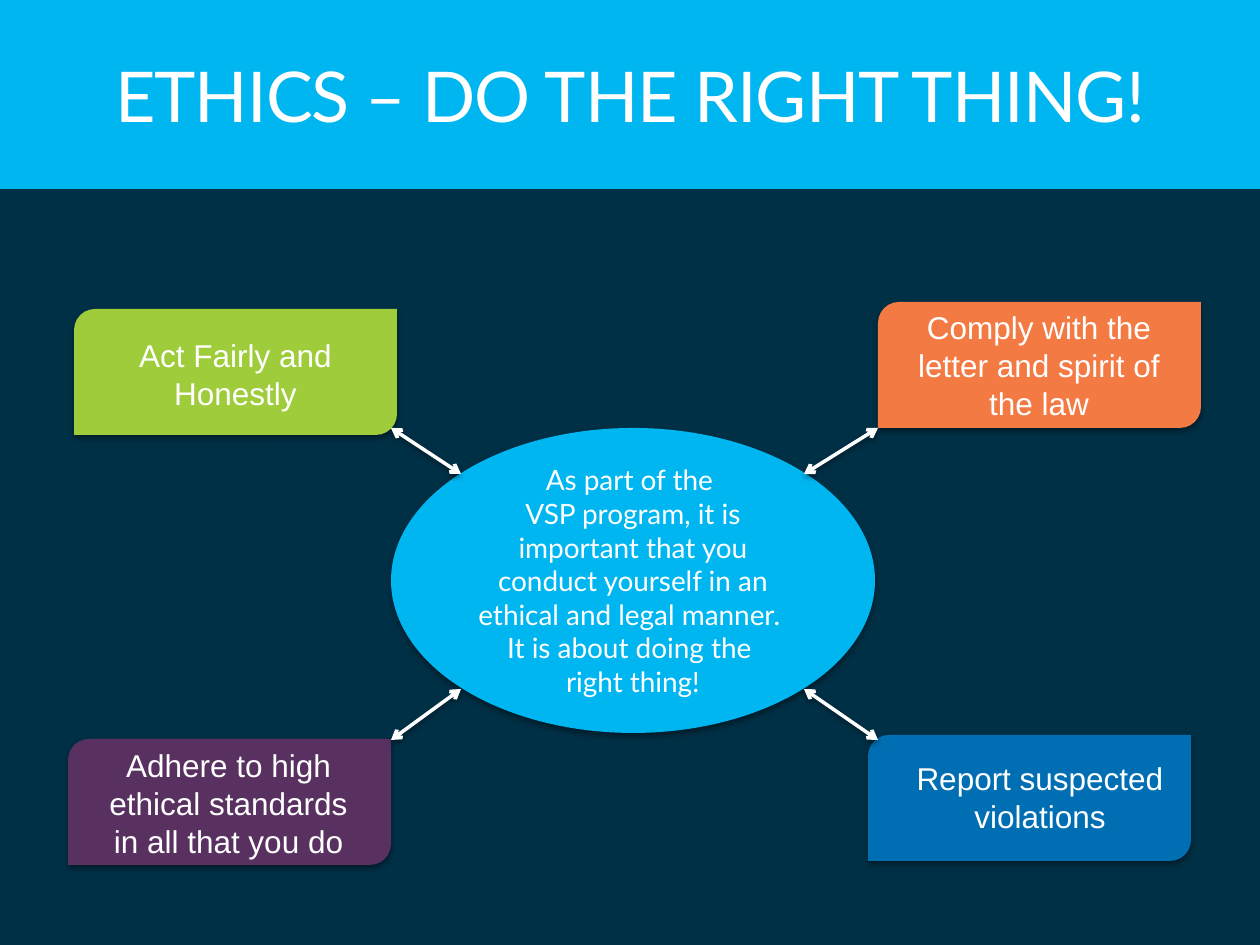
from dataclasses import dataclass

from lxml import etree
from pptx import Presentation
from pptx.dml.color import RGBColor
from pptx.enum.shapes import MSO_CONNECTOR, MSO_SHAPE
from pptx.enum.text import MSO_ANCHOR, MSO_AUTO_SIZE, PP_ALIGN
from pptx.oxml.ns import qn
from pptx.util import Emu, Pt

EMU_PER_PX = 914400 / 126
SLIDE_SIZE = (1260, 945)
TITLE_ONLY = 5
STRAIGHT = MSO_CONNECTOR.STRAIGHT
OVAL = MSO_SHAPE.OVAL
CARD = MSO_SHAPE.ROUND_2_DIAG_RECTANGLE
CENTER = PP_ALIGN.CENTER
MIDDLE = MSO_ANCHOR.MIDDLE
NO_FIT = MSO_AUTO_SIZE.NONE
GROW = MSO_AUTO_SIZE.SHAPE_TO_FIT_TEXT


@dataclass(frozen=True)
class Theme:
    background: str = "003046"
    accent: str = "00B6F1"
    text: str = "FFFFFF"
    green: str = "9FCC3B"
    orange: str = "F47A44"
    purple: str = "593160"
    blue: str = "006EB3"
    heading_font: str = "Lato"
    label_font: str = "Arial"
    title_size: int = 40
    label_size: int = 18
    core_size: int = 16
    arrow_width: int = 2


THEME = Theme()
CARD_SIZE = (323, 126)

# Card corner, fill, label box, label
PRINCIPLES = [
    ((74, 309), THEME.green, (100, 330, 271, 89), "Act Fairly and Honestly"),
    ((878, 302), THEME.orange, (896, 302, 286, 127),
     "Comply with the letter and spirit of the law"),
    ((68, 739), THEME.purple, (86, 740, 285, 127),
     "Adhere to high ethical standards in all that you do"),
    ((868, 735), THEME.blue, (888, 753, 304, 89), "Report suspected violations"),
]

CORE_BOX = (391, 428, 484, 305)
CORE_MESSAGE = (
    "As part of the \vVSP program, it is important that you conduct yourself "
    "in an ethical and legal manner. \n"
    "It is about doing the \vright thing!"
)

ARROWS = [
    ((461, 689), (391, 740)),
    ((804, 474), (878, 428)),
    ((878, 740), (804, 689)),
    ((391, 428), (461, 474)),
]


def px(*lengths):
    return [Emu(round(length * EMU_PER_PX)) for length in lengths]


def rgb(color):
    return RGBColor.from_string(color)


def paint(shape, color):
    shape.fill.solid()
    shape.fill.fore_color.rgb = rgb(color)
    shape.line.fill.background()


def add_shadow(shape):
    """Give a shape or connector the soft shadow that falls straight down."""
    properties = shape._element.spPr
    effects = etree.SubElement(properties, qn("a:effectLst"))
    shadow = etree.SubElement(effects, qn("a:outerShdw"), blurRad="40000",
                              dist="20000", dir="5400000", rotWithShape="0")
    color = etree.SubElement(shadow, qn("a:srgbClr"), val="000000")
    etree.SubElement(color, qn("a:alpha"), val="38000")


def write(shape, text, font, size, fit=NO_FIT):
    frame = shape.text_frame
    frame.text = text
    frame.word_wrap = True
    frame.auto_size = fit
    for paragraph in frame.paragraphs:
        paragraph.alignment = CENTER
        for run in paragraph.runs:
            run.font.name = font
            run.font.size = Pt(size)
            run.font.color.rgb = rgb(THEME.text)


def set_title(slide, text):
    title = slide.shapes.title
    title.left, title.top, title.width, title.height = px(0, 0, SLIDE_SIZE[0], 189)
    paint(title, THEME.accent)
    write(title, text, THEME.heading_font, THEME.title_size)
    title.text_frame.vertical_anchor = MIDDLE
    for run in title.text_frame.paragraphs[0].runs:
        run.font._element.set("spc", "-50")


def add_panel(slide, preset, box, color):
    panel = slide.shapes.add_shape(preset, *px(*box))
    paint(panel, color)
    add_shadow(panel)
    return panel


def add_core(slide):
    core = add_panel(slide, OVAL, CORE_BOX, THEME.accent)
    write(core, CORE_MESSAGE, THEME.heading_font, THEME.core_size)
    core.text_frame.vertical_anchor = MIDDLE


def add_principle(slide, corner, color, label_box, text):
    add_panel(slide, CARD, corner + CARD_SIZE, color)
    label = slide.shapes.add_textbox(*px(*label_box))
    write(label, text, THEME.label_font, THEME.label_size, GROW)


def add_double_arrow(slide, start, end):
    arrow = slide.shapes.add_connector(STRAIGHT, *px(*start, *end))
    arrow.line.color.rgb = rgb(THEME.text)
    arrow.line.width = Pt(THEME.arrow_width)
    line = arrow.line._get_or_add_ln()
    for tip in ("a:headEnd", "a:tailEnd"):
        etree.SubElement(line, qn(tip), type="arrow")
    add_shadow(arrow)


def main():
    presentation = Presentation()
    presentation.slide_width, presentation.slide_height = px(*SLIDE_SIZE)
    slide = presentation.slides.add_slide(presentation.slide_layouts[TITLE_ONLY])
    slide.background.fill.solid()
    slide.background.fill.fore_color.rgb = rgb(THEME.background)

    set_title(slide, "ETHICS – DO THE RIGHT THING!")
    add_core(slide)
    for principle in PRINCIPLES:
        add_principle(slide, *principle)
    for start, end in ARROWS:
        add_double_arrow(slide, start, end)
    presentation.save("out.pptx")


if __name__ == "__main__":
    main()
